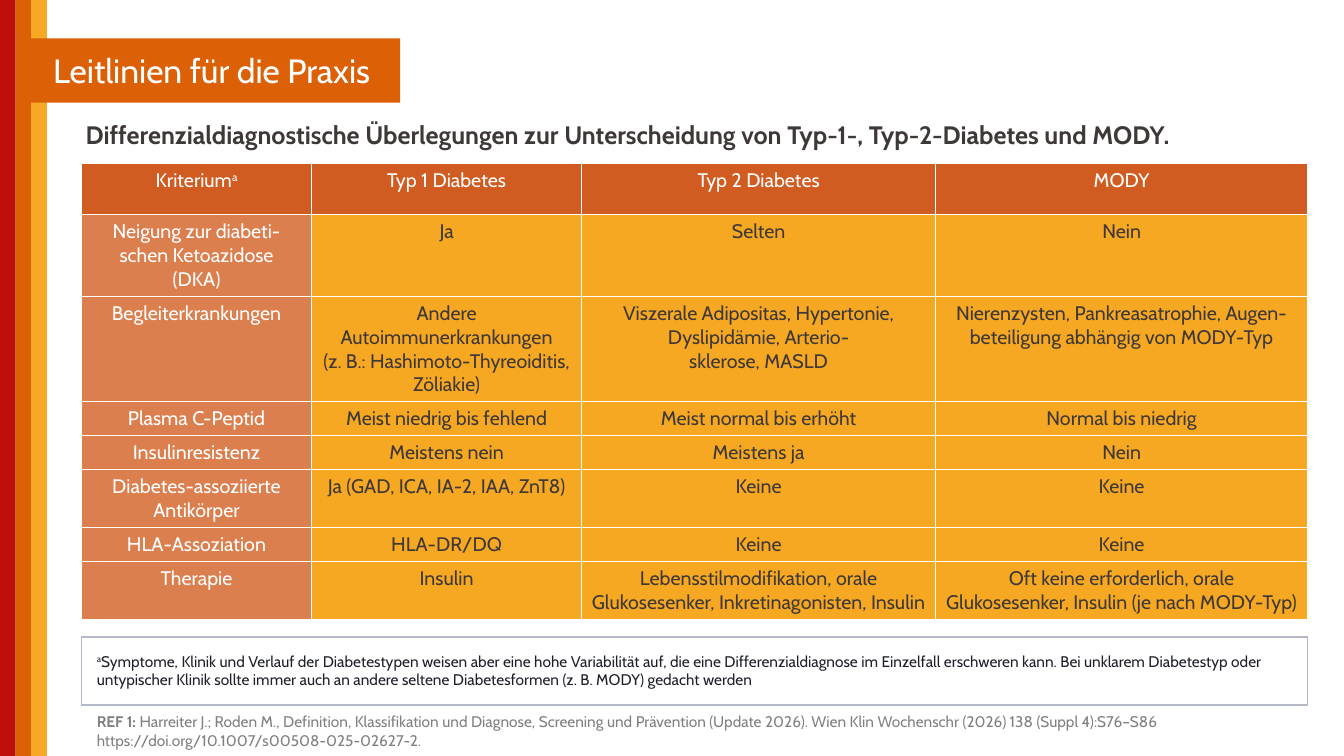
from lxml import etree
from pptx import Presentation
from pptx.dml.color import RGBColor
from pptx.enum import shapes, text
from pptx.oxml import ns
from pptx.util import Inches, Pt

COLORS = {
    "red": "C00E0D", "orange": "DB6006", "yellow": "F7A824", "white": "FFFFFF",
    "header": "D15C21", "criterion": "DB7F4E", "value": "F7A823",
    "dark": "3E3837", "note": "1E212A", "gray": "808080", "frame": "B4B8C7",
}
LEFT = 0.81

# Each cell holds one or more paragraphs; the first column names the criterion
CRITERIA = [
    ["Kriterium^a", "Typ 1 Diabetes", "Typ 2 Diabetes", "MODY"],
    ["Neigung zur diabeti-\nschen Ketoazidose\n(DKA)", "Ja", "Selten", "Nein"],
    ["Begleiterkrankungen",
     "Andere Autoimmunerkrankungen\n(z. B.: Hashimoto-Thyreoiditis, Zöliakie)",
     "Viszerale Adipositas, Hypertonie, Dyslipidämie, Arterio-\nsklerose, MASLD",
     "Nierenzysten, Pankreasatrophie, Augen-\nbeteiligung abhängig von MODY-Typ"],
    ["Plasma C-Peptid", "Meist niedrig bis fehlend", "Meist normal bis erhöht",
     "Normal bis niedrig"],
    ["Insulinresistenz", "Meistens nein", "Meistens ja", "Nein"],
    ["Diabetes-assoziierte\nAntikörper", "Ja (GAD, ICA, IA-2, IAA, ZnT8)", "Keine", "Keine"],
    ["HLA-Assoziation", "HLA-DR/DQ", "Keine", "Keine"],
    ["Therapie", "Insulin",
     "Lebensstilmodifikation, orale Glukosesenker, Inkretinagonisten, Insulin",
     "Oft keine erforderlich, orale Glukosesenker, Insulin (je nach MODY-Typ)"],
]
COLUMN_WIDTHS = [2.28, 2.68, 3.51, 3.69]
ROW_HEIGHTS = [0.51, 0.69, 0.73, 0.29, 0.29, 0.5, 0.3, 0.51]

REFERENCE = [
    "Harreiter J.; Roden M., Definition, Klassifikation und Diagnose, Screening und "
    "Prävention (Update 2026). Wien Klin Wochenschr (2026) 138 (Suppl 4):S76–S86",
    "https://doi.org/10.1007/s00508-025-02627-2.",
]
NOTE = (
    "Symptome, Klinik und Verlauf der Diabetestypen weisen aber eine hohe Variabilität auf, "
    "die eine Differenzialdiagnose im Einzelfall erschweren kann. Bei unklarem Diabetestyp oder "
    "untypischer Klinik sollte immer auch an andere seltene Diabetesformen (z. B. MODY) "
    "gedacht werden"
)


def rgb(name):
    return RGBColor.from_string(COLORS[name])


class GuidelineSlide:
    font = "Cabin"

    def __init__(self, deck):
        self.page = deck.slides.add_slide(deck.slide_layouts[5])

    def style(self, para, size, color, bold=False, align=text.PP_ALIGN.LEFT):
        para.alignment = align
        para.font.name, para.font.size, para.font.bold = self.font, Pt(size), bold
        para.font.color.rgb = rgb(color)

    def superscript(self, para, mark):
        span = para.add_run()
        span.text = mark
        span.font._element.set("baseline", "30000")

    def title(self, words, left, top, width, height):
        box = self.page.shapes.title
        box.left, box.top, box.width, box.height = map(Inches, (left, top, width, height))
        frame = box.text_frame
        frame.word_wrap, frame.auto_size = True, text.MSO_AUTO_SIZE.NONE
        frame.vertical_anchor = text.MSO_ANCHOR.TOP
        para = frame.paragraphs[0]
        para.text, para.line_spacing = words, 0.9
        self.style(para, 18, "dark", bold=True)

    def block(self, left, top, width, height, color, words=""):
        box = self.page.shapes.add_shape(
            shapes.MSO_SHAPE.RECTANGLE, *map(Inches, (left, top, width, height)))
        box.shadow.inherit = False
        box.fill.solid()
        box.fill.fore_color.rgb = rgb(color)
        box.line.fill.background()
        if words:
            box.text_frame.vertical_anchor = text.MSO_ANCHOR.MIDDLE
            para = box.text_frame.paragraphs[0]
            para.text = words
            self.style(para, 24, "white", align=text.PP_ALIGN.CENTER)

    def table(self, left, top, widths, heights):
        table = self.page.shapes.add_table(
            len(heights), len(widths), Inches(left), Inches(top),
            Inches(sum(widths)), Inches(sum(heights))).table
        table.first_row = table.horz_banding = False
        for column, width in zip(table.columns, widths):
            column.width = Inches(width)
        for row, height in zip(table.rows, heights):
            row.height = Inches(height)
        return table

    def format_cell(self, cell, fill=None, border=None, margin=None):
        properties = cell._tc.get_or_add_tcPr()
        for side in ("a:lnL", "a:lnR", "a:lnT", "a:lnB"):
            line = etree.SubElement(properties, ns.qn(side), w=str(Pt(1)))
            if border:
                paint = etree.SubElement(line, ns.qn("a:solidFill"))
                etree.SubElement(paint, ns.qn("a:srgbClr"), val=COLORS[border])
            else:
                etree.SubElement(line, ns.qn("a:noFill"))
        if fill:
            cell.fill.solid()
            cell.fill.fore_color.rgb = rgb(fill)
        else:
            cell.fill.background()
        if margin:
            cell.margin_left = cell.margin_right = Inches(margin)
            cell.margin_top = cell.margin_bottom = Inches(margin)

    def criteria_table(self, top):
        table = self.table(LEFT, top, COLUMN_WIDTHS, ROW_HEIGHTS)
        for i, row in enumerate(CRITERIA):
            for j, words in enumerate(row):
                cell = table.cell(i, j)
                fill = "header" if i == 0 else "criterion" if j == 0 else "value"
                self.format_cell(cell, fill, "white")
                words, _, mark = words.partition("^")
                cell.text = words
                for para in cell.text_frame.paragraphs:
                    self.style(para, 14, "dark" if fill == "value" else "white",
                               align=text.PP_ALIGN.CENTER)
                if mark:
                    self.superscript(para, mark)

    def text_row(self, top, width, height, border=None):
        cell = self.table(LEFT, top, [width], [height]).cell(0, 0)
        self.format_cell(cell, border=border, margin=0.15)
        return cell.text_frame

    def reference(self, top):
        frame = self.text_row(top, 12.25, 0.35)
        source, link = frame.paragraphs[0], frame.add_paragraph()
        for para in (source, link):
            self.style(para, 11, "gray")
        label = source.add_run()
        label.text, label.font.bold = "REF 1: ", True
        source.add_run().text, link.text = REFERENCE

    def note(self, top):
        para = self.text_row(top, 12.16, 0.67, "frame").paragraphs[0]
        self.style(para, 11, "note")
        self.superscript(para, "a")
        para.add_run().text = NOTE


def main():
    deck = Presentation()
    deck.slide_width, deck.slide_height = Inches(13.33), Inches(7.5)
    slide = GuidelineSlide(deck)

    # Colour stripes and section label
    for i, color in enumerate(("red", "orange", "yellow")):
        slide.block(i * 0.155, 0, 0.155, 7.5, color)
    slide.block(0.23, 0.38, 3.74, 0.64, "orange", "Leitlinien für die Praxis")

    # Heading and comparison
    slide.title("Differenzialdiagnostische Überlegungen zur Unterscheidung von "
                "Typ-1-, Typ-2-Diabetes und MODY.", 0.75, 1.17, 12.23, 0.48)
    slide.criteria_table(1.62)

    # Reference and footnote
    slide.reference(6.92)
    slide.note(6.32)

    deck.save("out.pptx")


if __name__ == "__main__":
    main()
